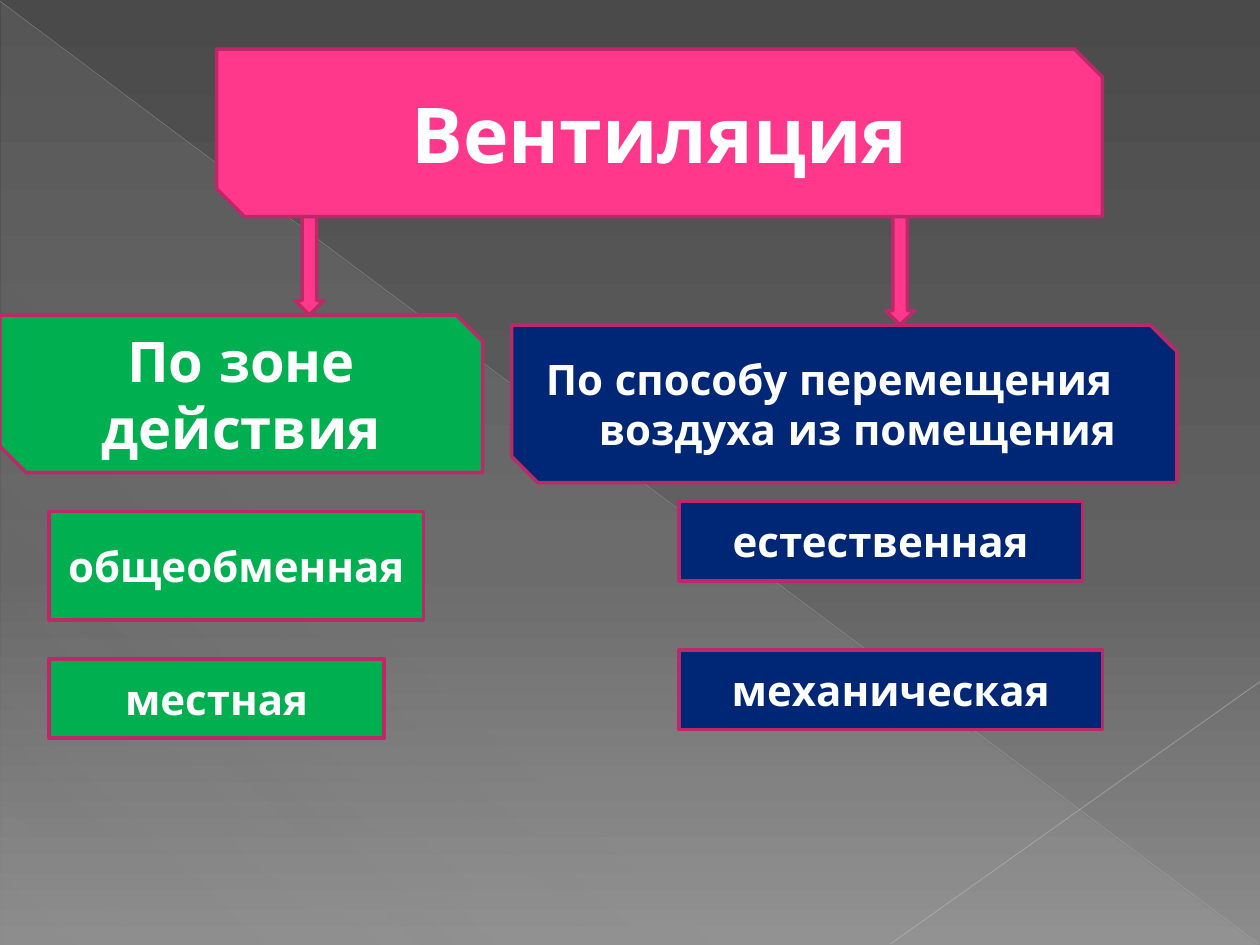
from dataclasses import dataclass

from lxml import etree
from pptx import Presentation
from pptx import util as u
from pptx.dml.color import RGBColor
from pptx.enum import shapes, text
from pptx.oxml.ns import qn

SHAPE = shapes.MSO_SHAPE


@dataclass(frozen=True)
class Theme:
    font: str = "Quicksand"
    white: str = "FFFFFF"
    pink: str = "FF388C"
    green: str = "00B050"
    navy: str = "002776"
    border: str = "BD2968"
    border_width: float = 2
    title: int = 44
    heading: int = 32
    body: int = 24
    # Gradient stops: position %, colour, opacity %
    backdrop: tuple = ((0, "4A4A4A", 100), (60, "626262", 100), (100, "8C8C8C", 100))
    sheen: tuple = ((0, "D2D2D2", 10), (70, "D2D2D2", 8), (100, "D2D2D2", 1))


THEME = Theme()


def set_opacity(color_element, percent):
    etree.SubElement(color_element, qn("a:alpha"), val=str(percent * 1000))


def set_gradient(fill, owner, stops, angle):
    fill.gradient()
    gradient = next(owner.iter(qn("a:gradFill")))
    stop_list = gradient.find(qn("a:gsLst"))
    for old_stop in list(stop_list):
        stop_list.remove(old_stop)
    for position, color, opacity in stops:
        stop = etree.SubElement(stop_list, qn("a:gs"), pos=str(position * 1000))
        set_opacity(etree.SubElement(stop, qn("a:srgbClr"), val=color), opacity)
    gradient.find(qn("a:lin")).set("ang", str(angle * 60000))


def add_hairline(page, start, end, color, width, opacity):
    points = [u.Inches(value) for value in (*start, *end)]
    line = page.shapes.add_connector(shapes.MSO_CONNECTOR.STRAIGHT, *points)
    line.line.color.rgb = RGBColor.from_string(color)
    line.line.width = u.Pt(width)
    set_opacity(next(line.line._ln.iter(qn("a:srgbClr"))), opacity)
    etree.SubElement(line._element.spPr, qn("a:effectLst"))


def add_backdrop(page):
    set_gradient(page.background.fill, page._element, THEME.backdrop, 90)
    triangle = page.shapes.add_shape(
        SHAPE.RIGHT_TRIANGLE, *map(u.Inches, (0.01, 0.02, 9.98, 7.48)))
    triangle.shadow.inherit = False
    triangle.line.fill.background()
    set_gradient(triangle.fill, triangle._element.spPr, THEME.sheen, 133)
    add_hairline(page, (0, 0.01), (9.99, 7.49), "BFBFBF", 0.39, 35)
    add_hairline(page, (10, 5.41), (7.07, 7.49), "C6C6C6", 0.47, 45)


def add_block(page, kind, place, color):
    block = page.shapes.add_shape(kind, *map(u.Inches, place))
    block.shadow.inherit = False
    block.fill.solid()
    block.fill.fore_color.rgb = RGBColor.from_string(color)
    block.line.color.rgb = RGBColor.from_string(THEME.border)
    block.line.width = u.Pt(THEME.border_width)
    return block


def add_box(page, kind, place, color, wording, size):
    box = add_block(page, kind, place, color)
    frame = box.text_frame
    frame.word_wrap = True
    frame.vertical_anchor = text.MSO_ANCHOR.MIDDLE
    para = frame.paragraphs[0]
    para.alignment = text.PP_ALIGN.CENTER
    span = para.add_run()
    span.text = wording
    span.font.name = THEME.font
    span.font.size = u.Pt(size)
    span.font.bold = True
    span.font.color.rgb = RGBColor.from_string(THEME.white)
    return para


def set_hanging_indent(para, margin, indent):
    para.alignment = text.PP_ALIGN.LEFT
    properties = para._p.get_or_add_pPr()
    properties.set("marL", str(u.Inches(margin)))
    properties.set("indent", str(u.Inches(indent)))


def main():
    deck = Presentation()
    deck.slide_width, deck.slide_height = u.Inches(10), u.Inches(7.5)
    page = deck.slides.add_slide(deck.slide_layouts[6])
    add_backdrop(page)

    # Root and the two classifications
    snipped = SHAPE.SNIP_2_DIAG_RECTANGLE
    add_box(page, snipped, (1.72, 0.39, 7.03, 1.33), THEME.pink,
            "Вентиляция", THEME.title)
    add_box(page, snipped, (0, 2.5, 3.83, 1.25), THEME.green,
            "По зоне действия", THEME.heading)

    # Arrows from the root
    for left, height in ((2.34, 0.78), (7.03, 0.86)):
        add_block(page, SHAPE.DOWN_ARROW, (left, 1.72, 0.23, height), THEME.pink)

    method = add_box(page, snipped, (4.06, 2.58, 5.28, 1.25), THEME.navy,
                     "По способу перемещения воздуха из помещения", THEME.body)
    set_hanging_indent(method, 0.49, -0.42)
    method.space_before = u.Pt(0.2 * THEME.body)

    # Kinds within each classification
    for place, color, wording in (
        ((0.39, 4.06, 2.97, 0.86), THEME.green, "общеобменная"),
        ((0.39, 5.23, 2.66, 0.63), THEME.green, "местная"),
        ((5.39, 3.98, 3.2, 0.63), THEME.navy, "естественная"),
        ((5.39, 5.16, 3.36, 0.63), THEME.navy, "механическая"),
    ):
        add_box(page, SHAPE.RECTANGLE, place, color, wording, THEME.body)

    deck.save("out.pptx")


if __name__ == "__main__":
    main()
